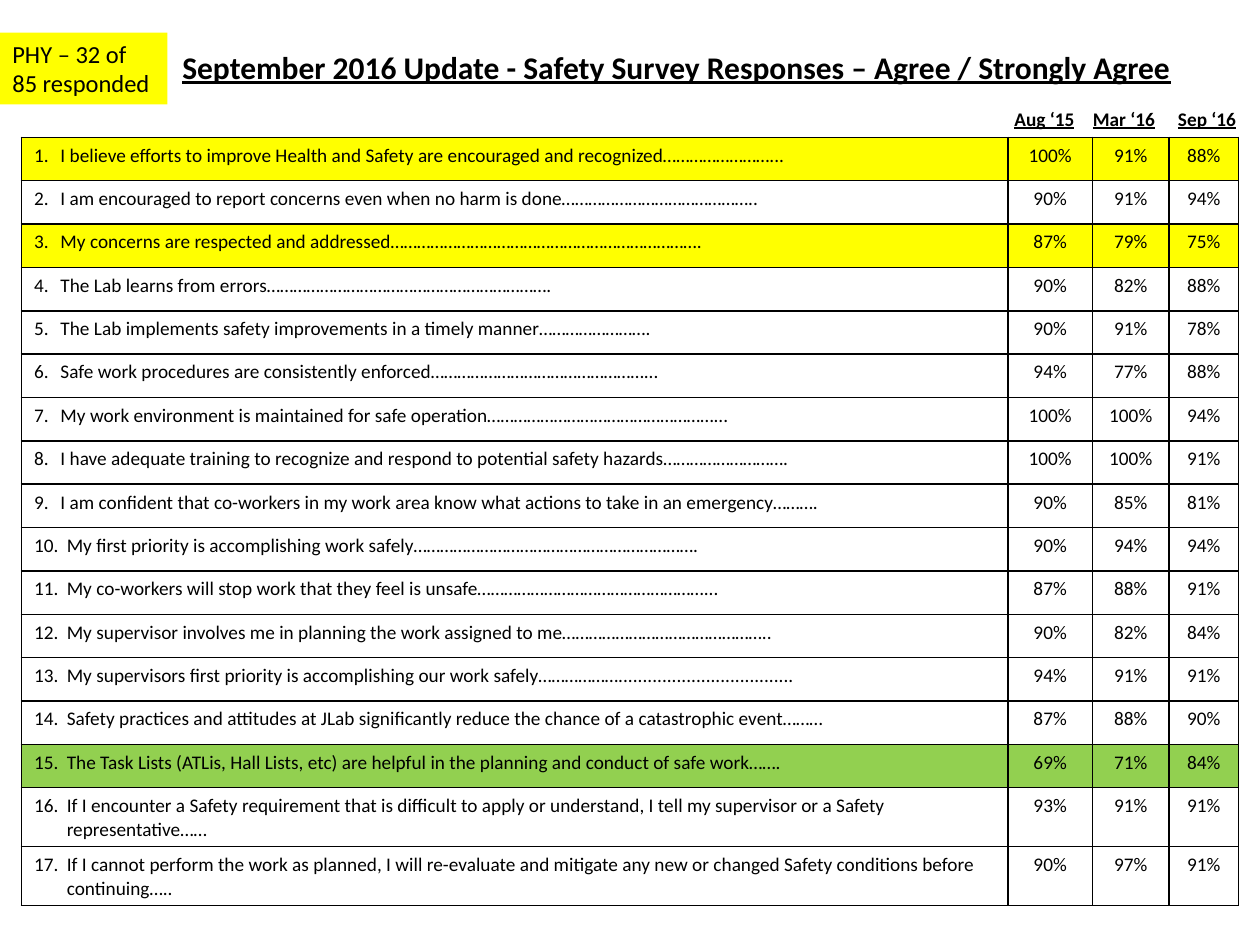
from lxml.etree import SubElement
from pptx import Presentation
from pptx.dml.color import RGBColor
from pptx.enum.shapes import MSO_SHAPE
from pptx.enum.text import MSO_ANCHOR, MSO_AUTO_SIZE, PP_ALIGN
from pptx.oxml.ns import qn
from pptx.util import Inches, Pt

COLORS = {"ink": "000000", "declined": "FFFF00", "improved": "92D050"}

SURVEYS = [("Aug ‘15", 7.79), ("Mar ‘16", 8.42), ("Sep ‘16", 9.08)]
COLUMN_WIDTHS = [7.83, 0.67, 0.61, 0.55]
TABLE_HEIGHT = 5.85
HIGHLIGHTS = {1: "declined", 3: "declined", 15: "improved"}

RESPONSES = [
    ("I believe efforts to improve Health and Safety are encouraged and recognized……………………...", 100, 91, 88),
    ("I am encouraged to report concerns even when no harm is done……………………………………..", 90, 91, 94),
    ("My concerns are respected and addressed…………………………………………………………….", 87, 79, 75),
    ("The Lab learns from errors……………………………………………………….", 90, 82, 88),
    ("The Lab implements safety improvements in a timely manner…………………….", 90, 91, 78),
    ("Safe work procedures are consistently enforced…………………………………………...", 94, 77, 88),
    ("My work environment is maintained for safe operation……………………………………………...", 100, 100, 94),
    ("I have adequate training to recognize and respond to potential safety hazards……………………….", 100, 100, 91),
    ("I am confident that co-workers in my work area know what actions to take in an emergency……….", 90, 85, 81),
    ("My first priority is accomplishing work safely……………………………………………………….", 90, 94, 94),
    ("My co-workers will stop work that they feel is unsafe……………………………………………...", 87, 88, 91),
    ("My supervisor involves me in planning the work assigned to me………………………………………..", 90, 82, 84),
    ("My supervisors first priority is accomplishing our work safely………………....................................", 94, 91, 91),
    ("Safety practices and attitudes at JLab significantly reduce the chance of a catastrophic event………", 87, 88, 90),
    ("The Task Lists (ATLis, Hall Lists, etc) are helpful in the planning and conduct of safe work…….", 69, 71, 84),
    ("If I encounter a Safety requirement that is difficult to apply or understand, "
     "I tell my supervisor or a Safety representative……", 93, 91, 91),
    ("If I cannot perform the work as planned, I will re-evaluate and mitigate any new or changed "
     "Safety conditions before continuing…..", 90, 97, 91),
]


def rgb(name):
    return RGBColor.from_string(COLORS[name])


class SurveySlide:
    font_name = "Calibri"

    def __init__(self, presentation):
        self.slide = presentation.slides.add_slide(presentation.slide_layouts[6])

    def style(self, paragraph, size, align=PP_ALIGN.LEFT, heading=False):
        paragraph.alignment = align
        font = paragraph.font
        font.name, font.size = self.font_name, Pt(size)
        font.color.rgb = rgb("ink")
        if heading:
            font.bold = font.underline = True

    def heading(self, text, left, top, width, height, size):
        box = self.slide.shapes.add_textbox(
            Inches(left), Inches(top), Inches(width), Inches(height))
        frame = box.text_frame
        frame.word_wrap = True
        frame.auto_size = MSO_AUTO_SIZE.SHAPE_TO_FIT_TEXT
        frame.text = text
        self.style(frame.paragraphs[0], size, PP_ALIGN.CENTER, heading=True)

    def label(self, text, left, top, width, height, fill, size):
        tag = self.slide.shapes.add_shape(
            MSO_SHAPE.RECTANGLE, Inches(left), Inches(top), Inches(width), Inches(height))
        tag.shadow.inherit = False
        tag.fill.solid()
        tag.fill.fore_color.rgb = rgb(fill)
        tag.line.fill.background()
        frame = tag.text_frame
        frame.word_wrap = True
        frame.vertical_anchor = MSO_ANCHOR.TOP
        frame.auto_size = MSO_AUTO_SIZE.SHAPE_TO_FIT_TEXT
        frame.text = text
        self.style(frame.paragraphs[0], size)

    def cell(self, cell, text, fill, align):
        cell.text = text
        self.style(cell.text_frame.paragraphs[0], 11, align)
        properties = cell._tc.get_or_add_tcPr()
        for side in ("a:lnL", "a:lnR", "a:lnT", "a:lnB"):
            border = SubElement(properties, qn(side), w=str(Pt(1)))
            solid = SubElement(border, qn("a:solidFill"))
            SubElement(solid, qn("a:srgbClr"), val=COLORS["ink"])
        if fill:
            cell.fill.solid()
            cell.fill.fore_color.rgb = rgb(fill)
        else:
            cell.fill.background()

    def hang(self, paragraph, indent):
        """Let the text after the number's tab, and any wrapped line, start at indent."""
        properties = paragraph._p.get_or_add_pPr()
        properties.set("marL", str(Inches(indent)))
        properties.set("indent", str(-Inches(indent)))

    def response_table(self, responses, left, top):
        table = self.slide.shapes.add_table(
            len(responses), len(COLUMN_WIDTHS), Inches(left), Inches(top),
            Inches(sum(COLUMN_WIDTHS)), Inches(TABLE_HEIGHT)).table
        table.first_row = table.horz_banding = False
        for column, width in zip(table.columns, COLUMN_WIDTHS):
            column.width = Inches(width)
        for number, (statement, *scores) in enumerate(responses, 1):
            fill = HIGHLIGHTS.get(number)
            question, *results = table.rows[number - 1].cells
            self.cell(question, f"{number}.\t{statement}", fill, PP_ALIGN.LEFT)
            self.hang(question.text_frame.paragraphs[0], 0.21 if number < 10 else 0.26)
            for result, score in zip(results, scores):
                self.cell(result, f"{score}%", fill, PP_ALIGN.CENTER)


def main():
    presentation = Presentation()
    presentation.slide_width, presentation.slide_height = Inches(10), Inches(7.5)
    survey = SurveySlide(presentation)
    survey.heading("September 2016 Update - Safety Survey Responses – Agree / Strongly Agree",
                   1.08, 0.33, 8.58, 0.4, size=18)
    survey.label("PHY – 32 of 85 responded", 0, 0.26, 1.33, 0.57, fill="declined", size=14)
    survey.response_table(RESPONSES, 0.17, 1.09)
    for month, left in SURVEYS:
        survey.heading(month, left, 0.8, 1, 0.29, size=11)
    presentation.save("out.pptx")


if __name__ == "__main__":
    main()
